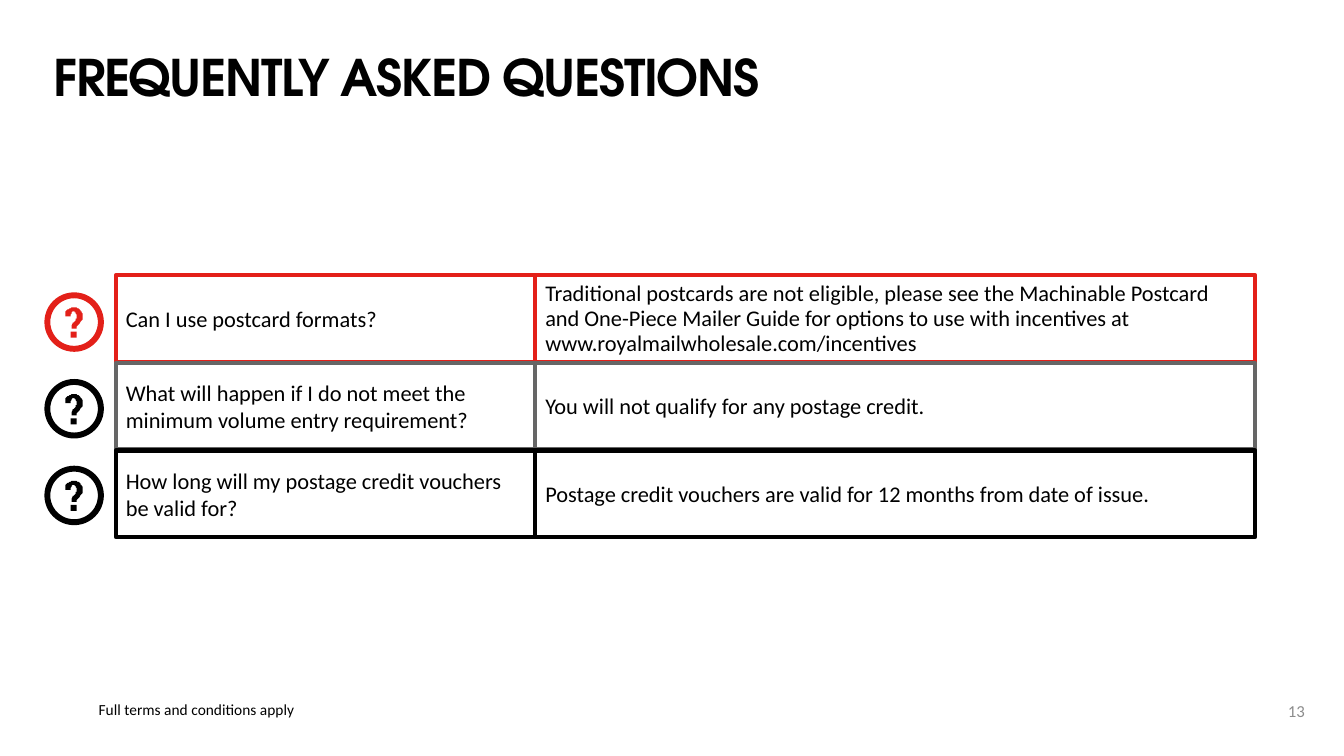
from pptx import Presentation
from pptx.util import Inches, Pt
from pptx.dml.color import RGBColor
from pptx.enum.shapes import MSO_SHAPE
from pptx.enum.text import MSO_ANCHOR, PP_ALIGN

RECT, RING = MSO_SHAPE.RECTANGLE, MSO_SHAPE.DONUT
TOP, MID = MSO_ANCHOR.TOP, MSO_ANCHOR.MIDDLE
LEFT, RIGHT = PP_ALIGN.LEFT, PP_ALIGN.RIGHT
HEX = {"red": "E32019", "gray": "666666", "black": "000000", "pale": "8C8C8C"}
BODY, HEAD = "Calibri", "TeX Gyre Adventor"

# Outline, icon tint, question, answer
FAQS = [
    ("red", "red", "Can I use postcard formats?",
     "Traditional postcards are not eligible, please see the Machinable Postcard "
     "and One-Piece Mailer Guide for options to use with incentives at "
     "www.royalmailwholesale.com/incentives"),
    ("gray", "black",
     "What will happen if I do not meet the minimum volume entry requirement?",
     "You will not qualify for any postage credit."),
    ("black", "black", "How long will my postage credit vouchers be valid for?",
     "Postage credit vouchers are valid for 12 months from date of issue."),
]

# Hook of the question mark in 1/100 inch: one point is a line, three a curve
START = (27, 36)
HOOK = [
    [(27, 32), (28, 30), (30, 29)], [(31, 28), (31, 27), (31, 26)],
    [(32, 26), (32, 25), (32, 23)], [(32, 22), (32, 22), (31, 21)],
    [(31, 20), (30, 19), (29, 19)], [(28, 19), (26, 20), (26, 24)],
    [(21, 24)], [(21, 23)],
    [(21, 20), (21, 18), (23, 17)], [(25, 16), (27, 15), (29, 15)],
    [(32, 15), (34, 16), (36, 18)], [(37, 19), (38, 21), (38, 24)],
    [(38, 31), (32, 31), (32, 36)],
]


def color(name):
    return RGBColor.from_string(HEX[name])


def write(shape, text, size, tint="black", font=BODY, anchor=MID,
          align=LEFT, space=None):
    frame = shape.text_frame
    frame.word_wrap = True
    frame.vertical_anchor = anchor
    frame.text = text
    para = frame.paragraphs[0]
    para.alignment = align
    if space:
        para.line_spacing = space
    run = para.runs[0]
    run.font.size, run.font.name = Pt(size), font
    run.font.color.rgb = color(tint)
    return run


def label(slide, box, text, size, pad, **style):
    shape = slide.shapes.add_textbox(*map(Inches, box))
    frame = shape.text_frame
    frame.margin_left = frame.margin_right = Inches(pad)
    frame.margin_top = frame.margin_bottom = 0
    return write(shape, text, size, **style)


def paint(shape, tint):
    shape.shadow.inherit = False
    shape.fill.solid()
    shape.fill.fore_color.rgb = color(tint)
    shape.line.fill.background()


def trace(start, parts, steps=6):
    spots, last = [], start
    for part in parts:
        if len(part) == 1:
            spots.append(part[0])
        else:
            for k in range(1, steps + 1):
                t = k / steps
                u = 1 - t
                spots.append(tuple(
                    u**3 * a + 3 * u * u * t * b + 3 * u * t * t * c + t**3 * d
                    for a, b, c, d in zip(last, *part)))
        last = part[-1]
    return spots


def icon(slide, left, top, tint):
    group = slide.shapes.add_group_shape().shapes
    dot = group.add_shape(RECT, Inches(left + 0.26), Inches(top + 0.39),
                          Inches(0.06), Inches(0.06))
    ring = group.add_shape(RING, Inches(left), Inches(top),
                           Inches(0.59), Inches(0.59))
    ring.adjustments[0] = 0.1
    pen = group.build_freeform(*START, scale=Inches(0.01))
    pen.add_line_segments(trace(START, HOOK), close=True)
    hook = pen.convert_to_shape(Inches(left), Inches(top))
    for part in (dot, ring, hook):
        paint(part, tint)


def cell(slide, box, text, tint, space=None):
    shape = slide.shapes.add_shape(RECT, *map(Inches, box))
    shape.shadow.inherit = False
    shape.fill.background()
    shape.line.color.rgb = color(tint)
    shape.line.width = Pt(3)
    write(shape, text, 16, space=space)


def header(slide, box):
    run = label(slide, box, "FREQUENTLY ASKED QUESTIONS", 36, 0,
                font=HEAD, anchor=TOP, space=Pt(44))
    run.font.bold = True
    run.font._element.set("spc", "-100")


def faq(slide, left, top):
    for i, (edge, tint, ask, reply) in enumerate(FAQS):
        y = top + 0.87 * i
        cell(slide, (left + 0.71, y, 4.16, 0.86), ask, edge)
        cell(slide, (left + 4.87, y, 7.14, 0.86), reply, edge, Pt(18))
    for i, (edge, tint, ask, reply) in enumerate(FAQS):
        icon(slide, left, top + 0.17 + 0.86 * i, tint)


def footer(slide, left, top):
    label(slide, (left, top + 0.12, 5.7, 0.15),
          "Full terms and conditions apply", 11, 0.1, anchor=TOP, space=0.9)
    label(slide, (left + 11.75, top, 0.41, 0.4), "13", 12, 0.1,
          tint="pale", align=RIGHT)


def main():
    deck = Presentation()
    deck.slide_width, deck.slide_height = Inches(13.33), Inches(7.5)
    slide = deck.slides.add_slide(deck.slide_layouts[6])
    header(slide, (0.53, 0.45, 11.01, 0.52))
    faq(slide, 0.44, 2.73)
    footer(slide, 0.88, 6.85)
    deck.save("out.pptx")


if __name__ == "__main__":
    main()
